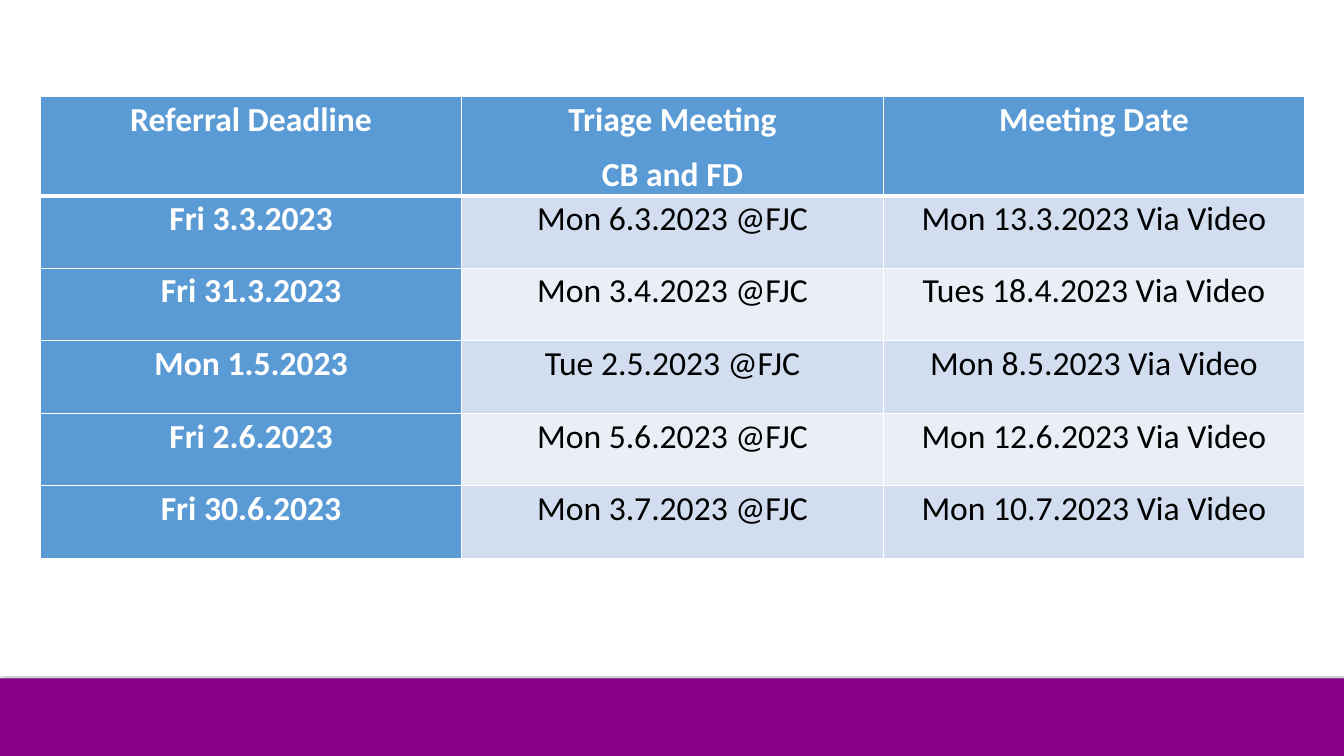
import pptx
import pptx.dml.color
import pptx.enum.shapes
import pptx.enum.text
import pptx.oxml
import pptx.oxml.ns
import pptx.util
from pptx.util import Inches

NS = pptx.oxml.ns.nsdecls("a")


def rgb(color):
    return pptx.dml.color.RGBColor.from_string(color)


def add_border(cell, side, width):
    cell._tc.get_or_add_tcPr().append(pptx.oxml.parse_xml(
        f'<a:{side} {NS} w="{pptx.util.Pt(width)}"><a:solidFill>'
        f'<a:srgbClr val="FFFFFF"/></a:solidFill></a:{side}>'))


prs = pptx.Presentation()
prs.slide_width = Inches(13.33)
prs.slide_height = Inches(7.5)
s = prs.slides.add_slide(prs.slide_layouts[6])

footer = s.shapes.add_shape(pptx.enum.shapes.MSO_SHAPE.RECTANGLE,
                            0, Inches(6.73), prs.slide_width, Inches(0.79))
footer.fill.solid()
footer.fill.fore_color.rgb = rgb("880088")
footer.line.fill.background()
footer.shadow.inherit = False
effects = footer._element.spPr.find(pptx.oxml.ns.qn("a:effectLst"))
effects.append(pptx.oxml.parse_xml(
    f'<a:outerShdw {NS} blurRad="{pptx.util.Pt(1)}" dist="0" dir="5400000">'
    '<a:srgbClr val="000000"><a:alpha val="50000"/></a:srgbClr></a:outerShdw>'))

rows = [
    ("Referral Deadline", "Triage Meeting\nCB and FD", "Meeting Date"),
    ("Fri 3.3.2023", "Mon 6.3.2023 @FJC", "Mon 13.3.2023 Via Video"),
    ("Fri 31.3.2023", "Mon 3.4.2023 @FJC", "Tues 18.4.2023 Via Video"),
    ("Mon 1.5.2023", "Tue 2.5.2023 @FJC", "Mon 8.5.2023 Via Video"),
    ("Fri 2.6.2023", "Mon 5.6.2023 @FJC", "Mon 12.6.2023 Via Video"),
    ("Fri 30.6.2023", "Mon 3.7.2023 @FJC", "Mon 10.7.2023 Via Video"),
]
table = s.shapes.add_table(len(rows), 3, Inches(0.4), Inches(0.96),
                           Inches(12.53), Inches(4.54)).table
for column in table.columns:
    column.width = Inches(4.18)

for i, row in enumerate(rows):
    table.rows[i].height = Inches(0.72 if i else 0.64)
    for j, text in enumerate(row):
        heading = i == 0 or j == 0
        cell = table.cell(i, j)
        cell.margin_left = cell.margin_right = Inches(0.07)
        cell.margin_top = cell.margin_bottom = 0
        for side in ("lnL", "lnR", "lnT", "lnB"):
            thick = (i, side) in ((0, "lnB"), (1, "lnT"))
            add_border(cell, side, 3 if thick else 1)
        cell.fill.solid()
        band = "D2DEEF" if i % 2 else "EAEFF7"
        cell.fill.fore_color.rgb = rgb("5B9BD5" if heading else band)
        cell.text_frame.text = text
        for p in cell.text_frame.paragraphs:
            p.alignment = pptx.enum.text.PP_ALIGN.CENTER
            p.line_spacing = 1.07
            p.space_after = pptx.util.Pt(8)
            for r in p.runs:
                r.font.name = "Calibri"
                r.font.size = pptx.util.Pt(24)
                r.font.bold = heading
                r.font.color.rgb = rgb("FFFFFF" if heading else "000000")

prs.save("out.pptx")
